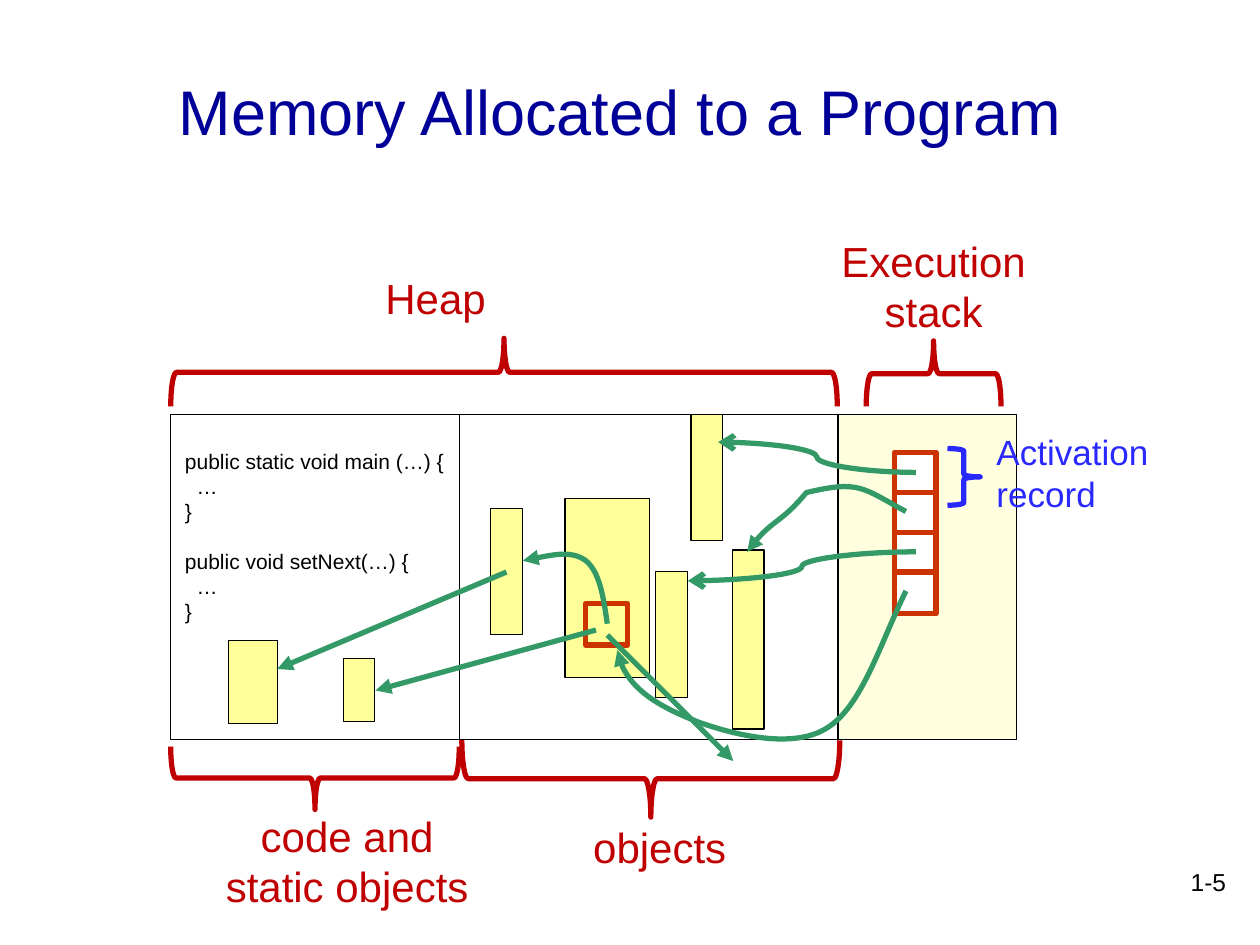
from dataclasses import dataclass
from typing import NamedTuple

from pptx import Presentation
from pptx import util as u
from pptx.dml.color import RGBColor
from pptx.enum import shapes, text
from pptx.oxml import parse_xml
from pptx.oxml.ns import nsdecls, qn

# All positions are in columns and rows of a 100 by 75 grid.
COLUMNS, ROWS = 100, 75
CELL = u.Inches(0.1)
COLORS = {
    "title": "000099", "label": "C00000", "note": "2929FF", "ink": "000000",
    "paper": "FFFFFF", "stack": "FFFFDF", "object": "FFFF99",
    "record": "CC3300", "reference": "339966",
}
LEFT, RIGHT, CENTER = text.PP_ALIGN.LEFT, text.PP_ALIGN.RIGHT, text.PP_ALIGN.CENTER


class Area(NamedTuple):
    column: float
    row: float
    columns: float
    rows: float


class Point(NamedTuple):
    column: float
    row: float


class Line(NamedTuple):
    words: str
    indent: float = 0
    before: float = 0


@dataclass
class Block:
    area: Area
    fill: str | None = "object"
    line: str = "ink"
    weight: float = 0.75


@dataclass
class Brace:
    area: Area
    rotation: int = 0
    color: str = "label"


@dataclass
class Label:
    area: Area
    lines: list[Line]
    size: float = 24
    color: str = "label"
    align: text.PP_ALIGN = LEFT
    wrap: bool = True


@dataclass
class Arrow:
    start: Point
    end: Point
    kind: shapes.MSO_CONNECTOR = shapes.MSO_CONNECTOR.STRAIGHT
    head: str = "triangle"


def grid(*values: float) -> list[int]:
    return [round(value * CELL) for value in values]


def rgb(name: str) -> RGBColor:
    return RGBColor.from_string(COLORS[name])


def style_line(shape, color: str, weight: float, head: str | None = None) -> None:
    shape.line.color.rgb = rgb(color)
    shape.line.width = u.Pt(weight)
    if head:
        shape.line._get_or_add_ln().append(
            parse_xml(f'<a:tailEnd {nsdecls("a")} type="{head}"/>'))


def draw_block(slide, block: Block) -> None:
    shape = slide.shapes.add_shape(shapes.MSO_SHAPE.RECTANGLE, *grid(*block.area))
    shape.shadow.inherit = False
    if block.fill:
        shape.fill.solid()
        shape.fill.fore_color.rgb = rgb(block.fill)
    else:
        shape.fill.background()
    style_line(shape, block.line, block.weight)


def draw_brace(slide, brace: Brace) -> None:
    """Draw a right brace that covers its area after it is rotated."""
    column, row, columns, rows = brace.area
    if brace.rotation:
        shift = (columns - rows) / 2
        column, row, columns, rows = column + shift, row - shift, rows, columns
    shape = slide.shapes.add_shape(
        shapes.MSO_SHAPE.RIGHT_BRACE, *grid(column, row, columns, rows))
    shape.rotation = brace.rotation
    shape.shadow.inherit = False
    shape.fill.background()
    style_line(shape, brace.color, 3)


def draw_arrow(slide, arrow: Arrow) -> None:
    connector = slide.shapes.add_connector(arrow.kind, *grid(*arrow.start, *arrow.end))
    style_line(connector, "reference", 3, arrow.head)
    connector._element.spPr.append(parse_xml(f'<a:effectLst {nsdecls("a")}/>'))


def draw_curve(slide, points: list[Point]) -> None:
    """Draw an arrow along Bézier segments: a start, then three points for each."""
    builder = slide.shapes.build_freeform(*grid(*points[0]))
    builder.add_line_segments([grid(*point) for point in points[1:]], close=False)
    shape = builder.convert_to_shape()
    steps = list(shape._element.iter(qn("a:lnTo")))
    for first in range(0, len(steps), 3):
        curve = parse_xml(f'<a:cubicBezTo {nsdecls("a")}/>')
        steps[first].addprevious(curve)
        for step in steps[first:first + 3]:
            curve.append(step[0])
            step.getparent().remove(step)
    shape.shadow.inherit = False
    shape.fill.background()
    style_line(shape, "reference", 3, "triangle")


def draw_label(slide, label: Label) -> None:
    frame = slide.shapes.add_textbox(*grid(*label.area)).text_frame
    frame.word_wrap = label.wrap
    for number, line in enumerate(label.lines):
        paragraph = frame.add_paragraph() if number else frame.paragraphs[0]
        paragraph.text = line.words
        paragraph.alignment = label.align
        paragraph.font.name = "Arial"
        paragraph.font.size = u.Pt(label.size)
        paragraph.font.color.rgb = rgb(label.color)
        if line.before:
            paragraph.space_before = u.Pt(line.before)
        if line.indent:
            paragraph._p.get_or_add_pPr().set("marL", str(grid(line.indent)[0]))


TOP, HEIGHT = 32.9, 25.8
REGIONS = [
    Block(Area(66.5, TOP, 14.2, HEIGHT), "stack"),
    Block(Area(36.5, TOP, 30, HEIGHT), "paper"),
    Block(Area(13.55, TOP, 22.9, HEIGHT), "paper"),
]
OBJECTS = [Block(Area(*area)) for area in (
    (54.85, TOP, 2.5, 10), (58.15, 43.65, 2.5, 14.2), (44.85, 39.55, 6.7, 14.2),
    (38.95, 40.35, 2.5, 10), (52.05, 45.35, 2.5, 10),
    (18.15, 50.85, 3.9, 6.6), (27.25, 52.25, 2.5, 5),
)]
RECORDS = [Block(Area(71, 35.9 + 3.17 * index, 3.3, 3.3), "paper", "record", 3)
           for index in range(4)]
FIELD = Block(Area(46.5, 47.9, 3.3, 3.3), None, "record", 3)
BRACES = [
    Brace(Area(75.2, 35.6, 2.6, 4.5), color="note"),
    Brace(Area(68.75, 27.05, 10.7, 5.2), 270),
    Brace(Area(13.55, 26.85, 52.9, 5.4), 270),
    Brace(Area(36.65, 58.75, 30, 6.1), 90),
    Brace(Area(13.55, 59.25, 22.9, 5), 90),
]
CURVES = [[Point(*point) for point in curve] for curve in (
    ((71.9, 40.6), (68.4, 38.7), (68.2, 38.1), (64, 39.1),
     (62.1, 41.4), (61.2, 41.2), (59.3, 43.8)),
    ((71.9, 46.9), (69.8, 51.2), (68.4, 56.1), (65.6, 57.8), (62.9, 59.5),
     (58.2, 58.3), (55.4, 57.3), (52.6, 56.2), (49.4, 54.5), (49, 51.6)),
    ((48.2, 49.5), (47.9, 47.4), (47.6, 45.4), (46.5, 44.5),
     (45.4, 43.7), (43.4, 44.1), (41.5, 44.5)),
)]
CURVED = shapes.MSO_CONNECTOR.CURVE
ARROWS = [
    Arrow(Point(72.7, 43.8), Point(54.6, 46.1), CURVED, "arrow"),
    Arrow(Point(72.7, 37.5), Point(57, 35.1), CURVED, "arrow"),
    Arrow(Point(48.2, 50.4), Point(58.2, 60.4)),
    Arrow(Point(47.3, 50), Point(29.8, 54.8)),
    Arrow(Point(40.2, 45.4), Point(22, 53.1)),
]
LABELS = [
    Label(Area(13.2, 5.3, 76.5, 7.1), [Line("Memory Allocated to a Program")], 36, "title"),
    Label(Area(29.6, 21.1, 10.1, 5), [Line("Heap")], wrap=False),
    Label(Area(63.7, 18.2, 20.8, 9.1), [Line("Execution stack")], align=CENTER),
    Label(Area(16.1, 63.8, 22.9, 9.1),
          [Line("code and"), Line("static objects")], align=CENTER),
    Label(Area(46.1, 64.7, 14.7, 5), [Line("objects")]),
    Label(Area(78.1, 33.7, 14.2, 7.7),
          [Line("Activation"), Line("record")], 20, "note", wrap=False),
    Label(Area(13.7, 35.1, 22.7, 17.2), [
        Line("public static void main (…) {"), Line("…", indent=0.93), Line("}"),
        Line("public void setNext(…) {", before=13.8), Line("…", indent=0.93), Line("}"),
    ], 12, "ink", wrap=False),
    Label(Area(77.5, 68.3, 20.8, 5), [Line("1-5")], 14, "ink", RIGHT),
]


def main() -> None:
    presentation = Presentation()
    presentation.slide_width, presentation.slide_height = grid(COLUMNS, ROWS)
    slide = presentation.slides.add_slide(presentation.slide_layouts[6])
    for block in [*REGIONS, *OBJECTS, *RECORDS, FIELD]:
        draw_block(slide, block)
    for curve in CURVES:
        draw_curve(slide, curve)
    for brace in BRACES:
        draw_brace(slide, brace)
    for label in LABELS:
        draw_label(slide, label)
    for arrow in ARROWS:
        draw_arrow(slide, arrow)
    presentation.save("out.pptx")


if __name__ == "__main__":
    main()
